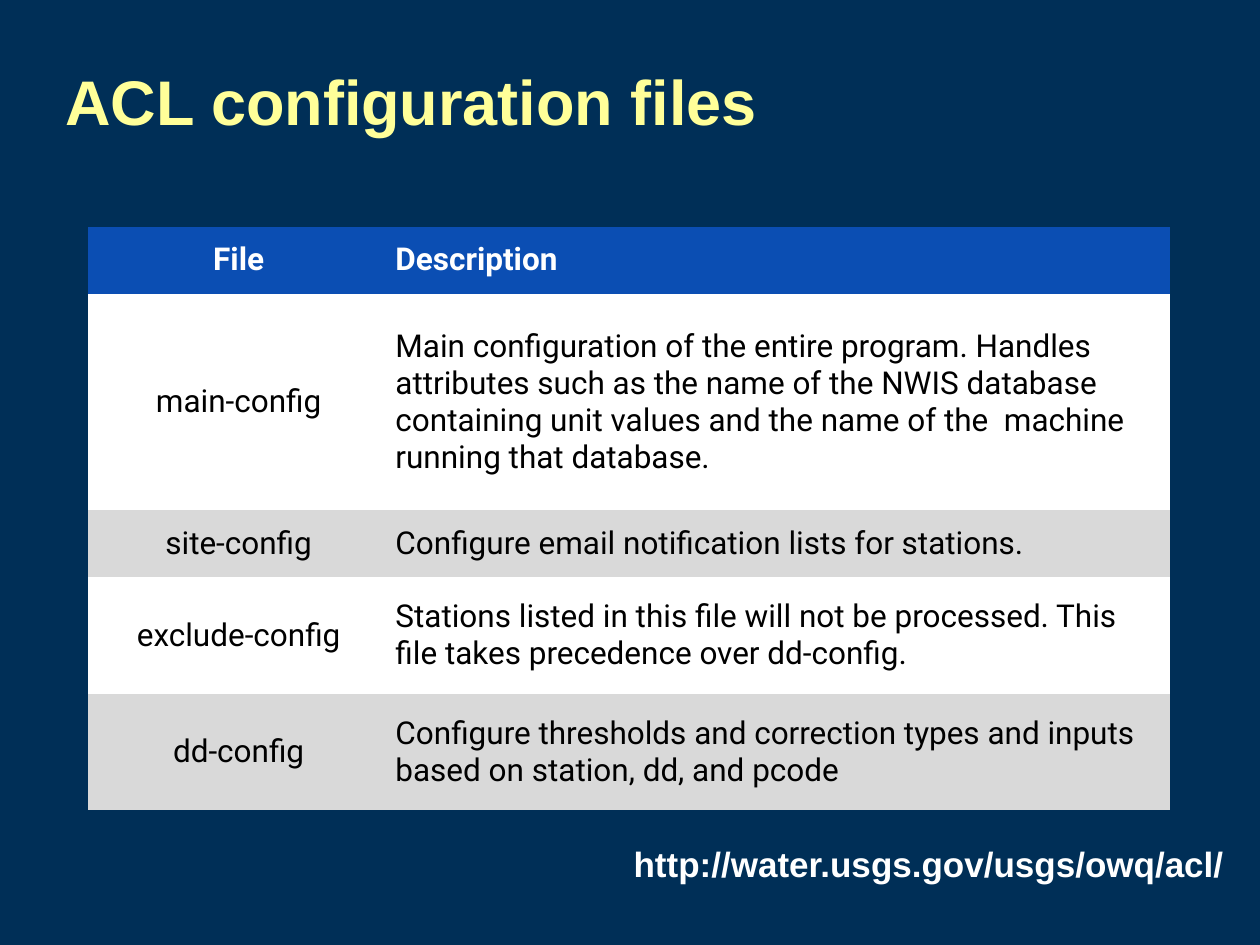
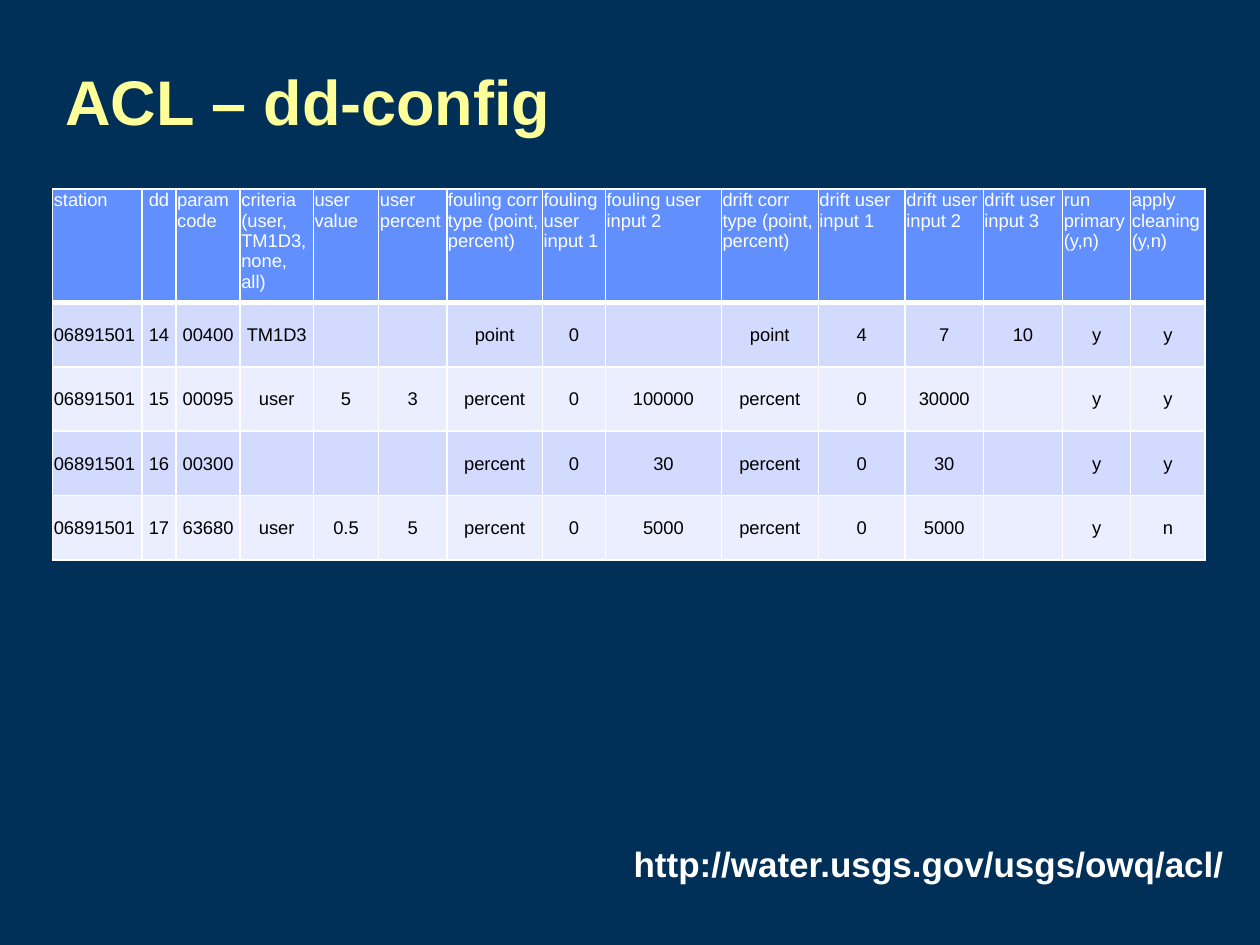
from dataclasses import dataclass

from lxml import etree
from pptx import Presentation
from pptx.dml.color import RGBColor
from pptx.enum.text import MSO_ANCHOR, MSO_AUTO_SIZE, PP_ALIGN
from pptx.oxml.ns import qn
from pptx.util import Pt

LEFT, MID = PP_ALIGN.LEFT, PP_ALIGN.CENTER
TOP, CENTER = MSO_ANCHOR.TOP, MSO_ANCHOR.MIDDLE
FIXED = MSO_AUTO_SIZE.NONE

HEX = {
    "navy": "002F57", "cream": "FFFF99", "white": "FFFFFF", "black": "000000",
    "cobalt": "0B4EB3", "gray": "D9D9D9",
    "azure": "618FFD", "sky": "D2DBFE", "mist": "EAEEFF",
}
URL = "http://water.usgs.gov/usgs/owq/acl/"


@dataclass(frozen=True)
class Type:
    font: str
    size: float
    color: str
    bold: bool = False


@dataclass(frozen=True)
class Grid:
    """Content and look of one table; lengths in points."""
    left: float
    top: float
    cols: list[float]
    heights: list[float]
    rows: list[list[str]]
    head: Type
    body: Type
    fills: tuple[str, str, str]      # header, odd rows, even rows
    pads: tuple[float, float, float, float]
    head_pos: MSO_ANCHOR
    head_mid: set[int]               # centred header columns
    body_left: set[int]              # left-aligned body columns
    line: float = 0                  # cell border width, 0 for none
    rule: float = 0                  # width of the line below the header


TITLE = Type("Arial", 36, "cream", True)
LINK = Type("Arial", 20, "white", True)

# Configuration files and what they do
FILES = Grid(
    left=50.4, top=129.6, cols=[172, 446.4],
    heights=[38.2, 123.8, 38.2, 66.6, 66.6],
    rows=[
        ["File", "Description"],
        ["main-config", "Main configuration of the entire program. Handles "
         "attributes such as the name of the NWIS database containing unit "
         "values and the name of the  machine running that database."],
        ["site-config", "Configure email notification lists for stations."],
        ["exclude-config", "Stations listed in this file will not be "
         "processed. This file takes precedence over dd-config."],
        ["dd-config", "Configure thresholds and correction types and inputs "
         "based on station, dd, and pcode"],
    ],
    head=Type("Roboto", 18, "white", True), body=Type("Roboto", 18, "black"),
    fills=("cobalt", "white", "gray"), pads=(3.6, 3.6, 3.6, 3.6),
    head_pos=CENTER, head_mid={0}, body_left={1},
)

# Sample dd-config entries; \n parts paragraphs, \v breaks a line
STATION = "06891501"
ENTRIES = Grid(
    left=30.1, top=108,
    cols=[51.1, 19.4, 36.7, 41.8, 37.4, 38.9, 54.7, 36, 66.2, 55.4,
          49.7, 44.6, 45.4, 38.9, 42.5],
    heights=[64.8] + [36.8] * 4,
    rows=[
        ["station", "dd", "param code", "criteria\n(user,\nTM1D3,\nnone,\nall)",
         "user value", "user percent", "fouling corr type (point, percent)",
         "fouling user input 1", "fouling user input 2",
         "drift corr type (point, percent)", "drift user input 1",
         "drift user input 2", "drift user input 3", "run primary (y,n)",
         "apply\vcleaning\v(y,n)"],
        [STATION, "14", "00400", "TM1D3", "", "", "point", "0", "",
         "point", "4", "7", "10", "y", "y"],
        [STATION, "15", "00095", "user", "5", "3", "percent", "0", "100000",
         "percent", "0", "30000", "", "y", "y"],
        [STATION, "16", "00300", "", "", "", "percent", "0", "30",
         "percent", "0", "30", "", "y", "y"],
        [STATION, "17", "63680", "user", "0.5", "5", "percent", "0", "5000",
         "percent", "0", "5000", "", "y", "n"],
    ],
    head=Type("Arial", 10.5, "white"), body=Type("Arial", 10.5, "black"),
    fills=("azure", "sky", "mist"), pads=(0.7, 0.7, 0.7, 0),
    head_pos=TOP, head_mid={1}, body_left={0}, line=1, rule=3,
)


def rgb(name: str) -> RGBColor:
    return RGBColor.from_string(HEX[name])


def write(frame, text: str, style: Type, align: PP_ALIGN = LEFT) -> None:
    """Fill a text frame run by run."""
    for i, part in enumerate(text.split("\n")):
        para = frame.paragraphs[0] if i == 0 else frame.add_paragraph()
        para.alignment = align
        for j, piece in enumerate(part.split("\v")):
            if j:
                para.add_line_break()
            if not piece:
                continue
            run = para.add_run()
            run.text = piece
            font = run.font
            font.name, font.size, font.bold = style.font, Pt(style.size), style.bold
            font.color.rgb = rgb(style.color)


def place(shape, left: float, top: float, width: float, height: float) -> None:
    shape.left, shape.top = Pt(left), Pt(top)
    shape.width, shape.height = Pt(width), Pt(height)


def edge(cell, sides: dict[str, float]) -> None:
    """Set border widths by side; zero hides the border."""
    props = cell._tc.get_or_add_tcPr()
    for i, (side, width) in enumerate(sides.items()):
        line = etree.Element(qn(f"a:ln{side}"), w=str(Pt(width)))
        if width:
            fill = etree.SubElement(line, qn("a:solidFill"))
            etree.SubElement(fill, qn("a:srgbClr"), val=HEX["white"])
        else:
            etree.SubElement(line, qn("a:noFill"))
        props.insert(i, line)


def draw_grid(slide, grid: Grid) -> None:
    frame = slide.shapes.add_table(
        len(grid.rows), len(grid.cols), Pt(grid.left), Pt(grid.top),
        Pt(sum(grid.cols)), Pt(sum(grid.heights)))
    table = frame.table
    table.horz_banding = False
    for col, width in zip(table.columns, grid.cols):
        col.width = Pt(width)
    for row, height in zip(table.rows, grid.heights):
        row.height = Pt(height)

    for r, row in enumerate(grid.rows):
        head = r == 0
        fill = grid.fills[0 if head else 2 - r % 2]
        sides = {"L": grid.line, "R": grid.line,
                 "T": grid.rule if r == 1 else grid.line,
                 "B": grid.rule if head else grid.line}
        for c, text in enumerate(row):
            cell = table.cell(r, c)
            cell.fill.solid()
            cell.fill.fore_color.rgb = rgb(fill)
            edge(cell, sides)
            (cell.margin_left, cell.margin_top, cell.margin_right,
             cell.margin_bottom) = map(Pt, grid.pads)
            cell.vertical_anchor = grid.head_pos if head else CENTER
            mid = c in grid.head_mid if head else c not in grid.body_left
            write(cell.text_frame, text, grid.head if head else grid.body,
                  MID if mid else LEFT)


def add_page(deck, title: str, grid: Grid) -> None:
    slide = deck.slides.add_slide(deck.slide_layouts.get_by_name("Title Only"))

    # Title
    head = slide.shapes.title
    place(head, 30.2, 12.2, 653.8, 90)
    frame = head.text_frame
    frame.auto_size, frame.vertical_anchor = FIXED, CENTER
    write(frame, title, TITLE)

    draw_grid(slide, grid)

    # Web address at the foot
    foot = slide.shapes.add_textbox(Pt(355), Pt(478), Pt(357), Pt(39.6))
    foot.text_frame.word_wrap = True
    write(foot.text_frame, URL, LINK)


def main() -> None:
    deck = Presentation()
    deck.slide_width, deck.slide_height = Pt(720), Pt(540)
    back = deck.slide_master.background.fill
    back.solid()
    back.fore_color.rgb = rgb("navy")

    add_page(deck, "ACL configuration files", FILES)
    add_page(deck, "ACL – dd-config", ENTRIES)
    deck.save("out.pptx")


if __name__ == "__main__":
    main()
